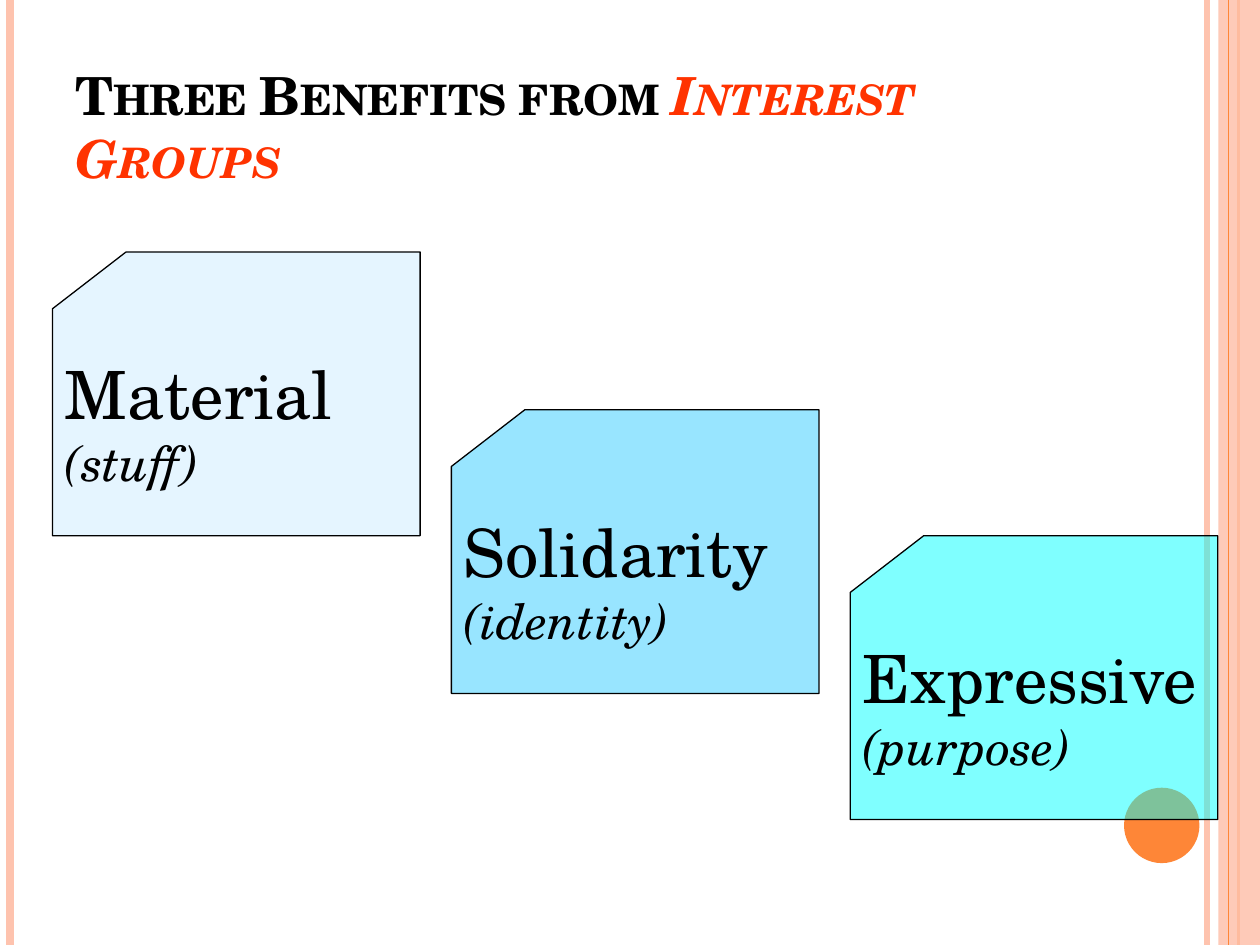
import pptx
import pptx.util
import pptx.dml.color
import pptx.enum.shapes
import pptx.enum.text
import pptx.oxml.ns
import lxml.etree

Cm = pptx.util.Cm
Pt = pptx.util.Pt
RGB = pptx.dml.color.RGBColor.from_string
SHAPES = pptx.enum.shapes.MSO_SHAPE
ANCHOR = pptx.enum.text.MSO_ANCHOR
qn = pptx.oxml.ns.qn

FONT = "TeX Gyre Schola"
COLORS = {
    "black": "000000",
    "red": "FF3300",
    "peach": "FEC3AE",
    "orange": "FE8637",
    "pale": "CCECFF",
    "sky": "33CCFF",
    "cyan": "00FFFF",
}

presentation = pptx.Presentation()
presentation.slide_width = Cm(25.4)
presentation.slide_height = Cm(19.05)
slide = presentation.slides.add_slide(presentation.slide_layouts[6])


def add_filled_shape(kind, left, top, width, height, color, opacity=100):
    shape = slide.shapes.add_shape(kind, Cm(left), Cm(top), Cm(width), Cm(height))
    shape.shadow.inherit = False
    shape.fill.solid()
    shape.fill.fore_color.rgb = RGB(COLORS[color])
    shape.line.fill.background()
    if opacity < 100:
        color_element = shape.fill._xPr.find(qn("a:solidFill"))[0]
        alpha = lxml.etree.SubElement(color_element, qn("a:alpha"))
        alpha.set("val", str(opacity * 1000))
    return shape


def format_run(run, size, color, italic=False, bold=False):
    run.font.name = FONT
    run.font.size = Pt(size)
    run.font.italic = italic
    run.font.bold = bold
    run.font.color.rgb = RGB(COLORS[color])


stripes = [
    (24.33, "peach", 3),
    (0.2, "peach", 4.5),
    (24.97, "orange", 1.5),
    (24.77, "orange", 0.75),
]
for index, (x, color, weight) in enumerate(stripes):
    if index == 3:
        add_filled_shape(SHAPES.RECTANGLE, 24.56, 0, 0.84, 19.05, "peach", 87)
    stripe = slide.shapes.add_connector(
        pptx.enum.shapes.MSO_CONNECTOR.STRAIGHT, Cm(x), Cm(0), Cm(x), Cm(19.05)
    )
    stripe.line.color.rgb = RGB(COLORS[color])
    stripe.line.width = Pt(weight)
    lxml.etree.SubElement(stripe._element.spPr, qn("a:effectLst"))

add_filled_shape(SHAPES.OVAL, 22.66, 15.88, 1.52, 1.52, "orange")

cards = [
    ("Material", "(stuff)", 5.08, "pale"),
    ("Solidarity", "(identity)", 8.26, "sky"),
    ("Expressive", "(purpose)", 10.8, "cyan"),
]
for index, (benefit, meaning, top, color) in enumerate(cards):
    card = add_filled_shape(
        SHAPES.FLOWCHART_CARD, 1.06 + 8.04 * index, top, 7.41, 5.72, color, 50
    )
    card.line.color.rgb = RGB(COLORS["black"])
    card.line.width = Pt(0.75)
    text_frame = card.text_frame
    text_frame.word_wrap = False
    text_frame.vertical_anchor = ANCHOR.MIDDLE
    text_frame.text = f"{benefit}\n{meaning}"
    for paragraph, size, italic in zip(text_frame.paragraphs, (38, 28), (False, True)):
        paragraph.alignment = pptx.enum.text.PP_ALIGN.LEFT
        format_run(paragraph.runs[0], size, "black", italic)

title = slide.shapes.add_textbox(Cm(1.27), Cm(0.76), Cm(20.75), Cm(3.18))
title.text_frame.word_wrap = True
title.text_frame.vertical_anchor = ANCHOR.BOTTOM
paragraph = title.text_frame.paragraphs[0]
for text, color, italic in [
    ("Three Benefits from ", "black", False),
    ("Interest Groups", "red", True),
]:
    run = paragraph.add_run()
    run.text = text
    format_run(run, 30, color, italic, bold=True)
    run.font._element.set("cap", "small")

presentation.save("out.pptx")
